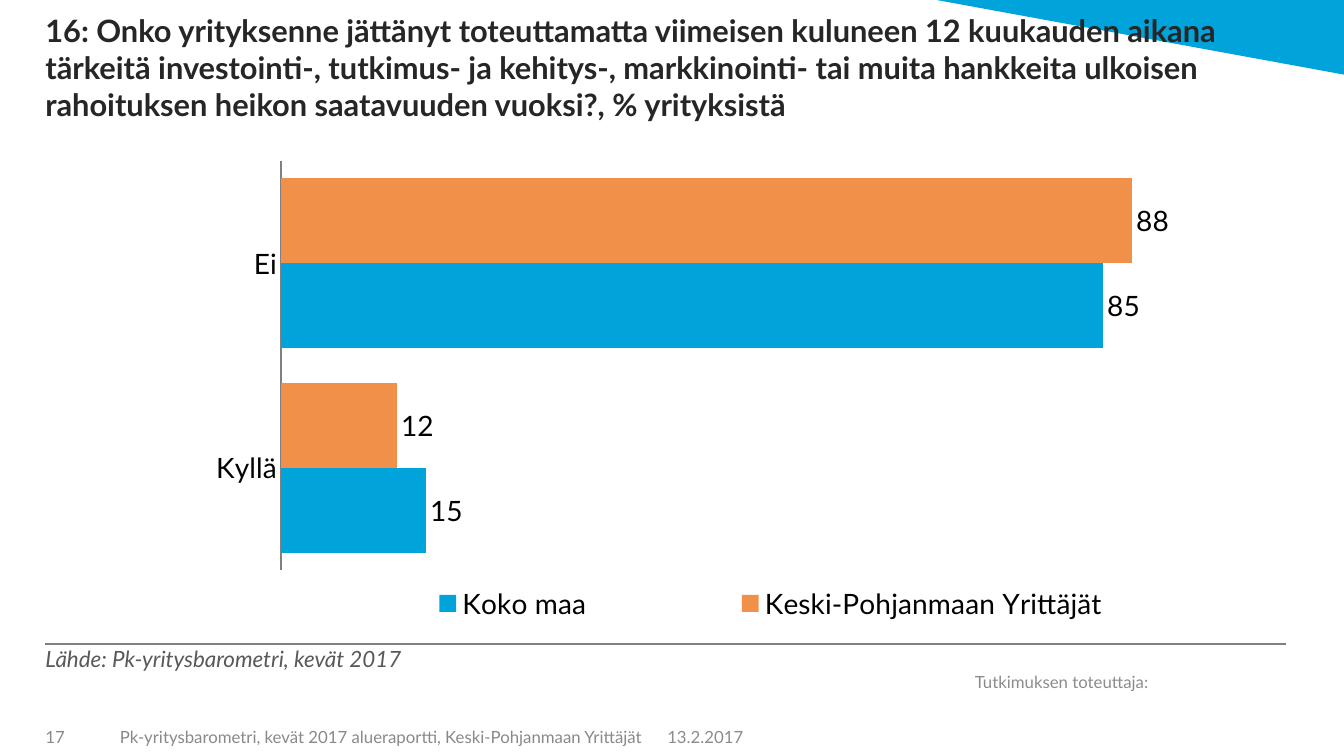
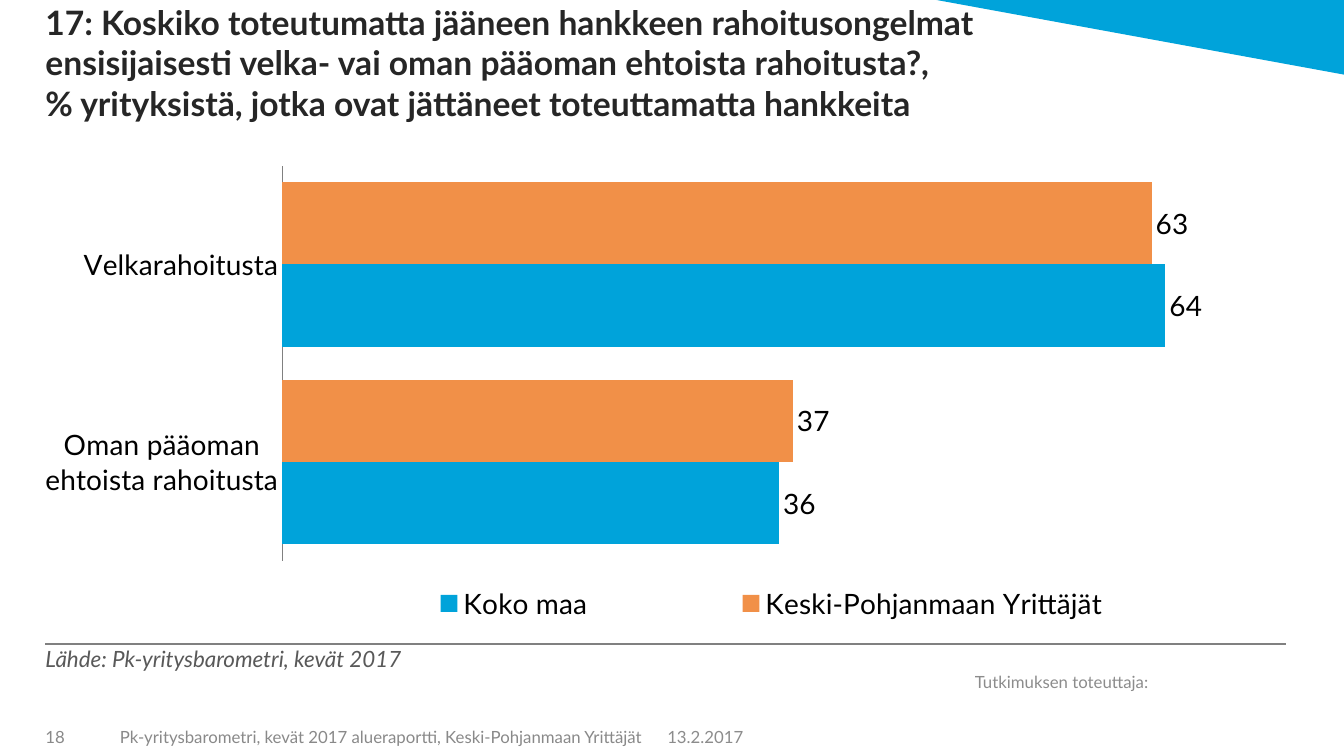
from lxml import etree
from pptx import Presentation
from pptx.chart import data
from pptx.dml.color import RGBColor
from pptx.enum import chart as ch, shapes, text
from pptx.oxml import ns
from pptx.util import Inches, Pt

FONT = "Lato"
BLUE, ORANGE = "00A3DA", "F19048"
BLACK, DARK, MID, GREY = "000000", "262626", "595959", "808080"
FOOT, PALE = "898989", "8C8C8C"
LEFT, WIDE = 0.45, 12.3
PAD = (0.1, 0.05, 0.1, 0.05)
NONE = (0, 0, 0, 0)
SERIES = (("Keski-Pohjanmaan Yrittäjät", ORANGE), ("Koko maa", BLUE))
LEGEND = (0.2, 0.89, 0.77, 0.1)

PAGES = (
    dict(num="17", size=22, top=100, plot=(0.19, 0.01, 0.78, 0.86),
         title="16: Onko yrityksenne jättänyt toteuttamatta viimeisen kuluneen "
               "12 kuukauden aikana tärkeitä investointi-, tutkimus- ja kehitys-, "
               "markkinointi- tai muita hankkeita ulkoisen rahoituksen heikon "
               "saatavuuden vuoksi?, % yrityksistä",
         cats=("Ei", "Kyllä"), rows=((88, 12), (85, 15))),
    dict(num="18", size=24, top=70, plot=(0.19, 0.02, 0.78, 0.83),
         title="17: Koskiko toteutumatta jääneen hankkeen rahoitusongelmat\v"
               "ensisijaisesti velka- vai oman pääoman ehtoista rahoitusta?,\v"
               "% yrityksistä, jotka ovat jättäneet toteuttamatta hankkeita",
         cats=("Velkarahoitusta", "Oman pääoman ehtoista rahoitusta"),
         rows=((63, 37), (64, 36))),
)


def rgb(code):
    """Turn a hex string into a colour."""
    return RGBColor.from_string(code)


def paint(part, code):
    """Give a part a solid fill."""
    part.fill.solid()
    part.fill.fore_color.rgb = rgb(code)


def style(font, size, code, bold=False, italic=False):
    """Set the face, size and colour of a font."""
    font.name, font.size = FONT, Pt(size)
    font.bold, font.italic = bold, italic
    font.color.rgb = rgb(code)


def fill_text(shape, words, size, code, pad=PAD,
              anchor=text.MSO_ANCHOR.MIDDLE, **face):
    """Write one styled left-aligned paragraph into a shape."""
    frame = shape.text_frame
    frame.word_wrap = True
    frame.auto_size = text.MSO_AUTO_SIZE.NONE
    frame.vertical_anchor = anchor
    (frame.margin_left, frame.margin_top,
     frame.margin_right, frame.margin_bottom) = map(Inches, pad)
    frame.text = words
    para = frame.paragraphs[0]
    para.alignment = text.PP_ALIGN.LEFT
    style(para.font, size, code, **face)


def label(slide, box, *args, **opts):
    """Add a text box at the given box."""
    fill_text(slide.shapes.add_textbox(*map(Inches, box)), *args, **opts)


def add_title(slide, box, words, size):
    """Place and format the title placeholder."""
    title = slide.shapes.title
    title.left, title.top, title.width, title.height = map(Inches, box)
    fill_text(title, words, size, DARK, NONE, text.MSO_ANCHOR.BOTTOM, bold=True)


def add_band(slide, box):
    """Put the corner triangle behind everything else."""
    band = slide.shapes.add_shape(shapes.MSO_SHAPE.RIGHT_TRIANGLE,
                                  *map(Inches, box))
    band.rotation = 180
    band.shadow.inherit = False
    paint(band, BLUE)
    band.line.fill.background()
    node = band._element
    node.getparent().insert(2, node)


def add_foot(slide, box, num):
    """Draw the rule, source, credit and footer line."""
    x, y, w, h = box
    rule = slide.shapes.add_connector(shapes.MSO_CONNECTOR.STRAIGHT,
                                      *map(Inches, (x, y, x + w, y)))
    rule.line.color.rgb = rgb(GREY)
    rule.line.width = Pt(1.5)
    etree.SubElement(rule._element.spPr, ns.qn("a:effectLst"))
    label(slide, (x, y + 0.01, 10.62, 0.43),
          "Lähde: Pk-yritysbarometri, kevät 2017", 16, MID, NONE,
          text.MSO_ANCHOR.TOP, italic=True)
    label(slide, (x + 9.12, y + 0.17, 2.18, 0.41),
          "Tutkimuksen toteuttaja:", 12, PALE)
    low = y + h - 0.35
    label(slide, (x, low, 0.63, 0.35), num, 12, FOOT, (0, 0.05, 0.1, 0.05))
    label(slide, (x + 0.64, low, 5.41, 0.35),
          "Pk-yritysbarometri, kevät 2017 alueraportti, "
          "Keski-Pohjanmaan Yrittäjät", 12, FOOT)
    label(slide, (x + 6.07, low, 1.33, 0.35), "13.2.2017", 12, PALE)


def set_layout(node, index, box, inner=False):
    """Fix the place of a chart part as fractions of the chart."""
    for old in node.findall(ns.qn("c:layout")):
        node.remove(old)
    layout = etree.Element(ns.qn("c:layout"))
    manual = etree.SubElement(layout, ns.qn("c:manualLayout"))
    pairs = [("layoutTarget", "inner")] if inner else []
    pairs += [("xMode", "edge"), ("yMode", "edge"), *zip("xywh", box)]
    for tag, val in pairs:
        etree.SubElement(manual, ns.qn("c:" + tag)).set("val", str(val))
    node.insert(index, layout)


def add_bars(slide, box, cats, rows, top, area):
    """Add the clustered bar chart with its legend."""
    info = data.CategoryChartData(number_format="#,##0")
    info.categories = cats
    for (name, _), vals in zip(SERIES, rows):
        info.add_series(name, vals)
    chart = slide.shapes.add_chart(ch.XL_CHART_TYPE.BAR_CLUSTERED,
                                   *map(Inches, box), info).chart
    style(chart.font, 20, BLACK)
    chart.has_title = False

    axis = chart.category_axis
    axis.reverse_order = True
    axis.major_tick_mark = axis.minor_tick_mark = ch.XL_TICK_MARK.NONE
    axis.format.line.color.rgb = rgb(GREY)
    scale = chart.value_axis
    scale.visible = scale.has_major_gridlines = False
    scale.minimum_scale, scale.maximum_scale = 0, top

    plot = chart.plots[0]
    plot.gap_width, plot.overlap = 40, 0
    plot.vary_by_categories = False
    for bar, (_, code) in zip(plot.series, SERIES):
        paint(bar.format, code)
    plot.has_data_labels = True
    marks = plot.data_labels
    marks.show_value = True
    marks.position = ch.XL_LABEL_POSITION.OUTSIDE_END
    marks.number_format, marks.number_format_is_linked = "#,##0", False

    chart.has_legend = True
    chart.legend.position = ch.XL_LEGEND_POSITION.RIGHT
    chart.legend.include_in_layout = False
    set_layout(chart.legend._element, 1, LEGEND)
    set_layout(chart._chartSpace.chart.plotArea, 0, area, inner=True)


def add_page(deck, page):
    """Build one survey slide."""
    slide = deck.slides.add_slide(deck.slide_layouts[5])
    add_band(slide, (9.29, 0, 4.04, 0.74))
    add_title(slide, (LEFT, 0, WIDE, 1.22), page["title"], page["size"])
    add_bars(slide, (LEFT, 1.55, WIDE, 4.72), page["cats"], page["rows"],
             page["top"], page["plot"])
    add_foot(slide, (LEFT, 6.39, WIDE, 1.09), page["num"])


def main():
    """Build and save the deck."""
    deck = Presentation()
    deck.slide_width, deck.slide_height = Inches(13.33), Inches(7.5)
    for page in PAGES:
        add_page(deck, page)
    deck.save("out.pptx")


if __name__ == "__main__":
    main()
